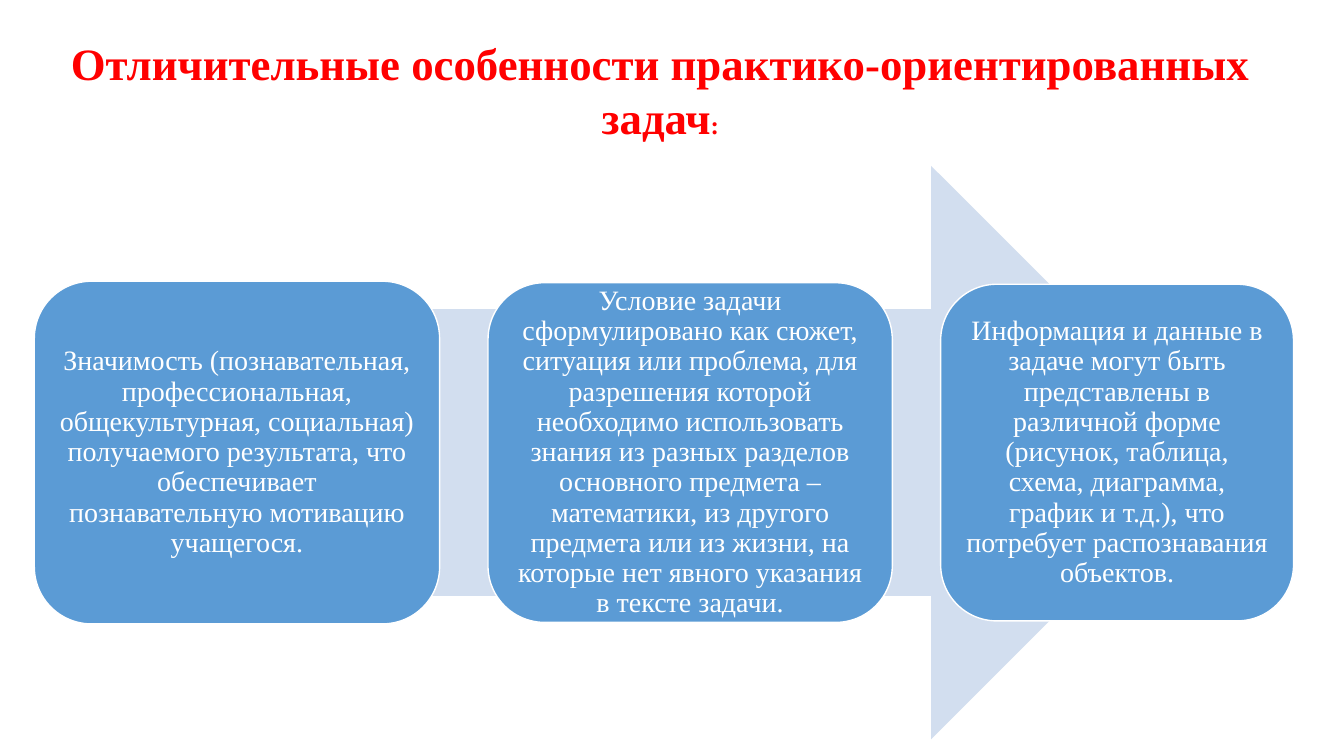
from pptx import Presentation
from pptx.dml.color import RGBColor
from pptx.enum.shapes import MSO_SHAPE as Shape
from pptx.enum.text import MSO_ANCHOR as Anchor, PP_ALIGN as Align
from pptx.util import Inches, Pt

# Content
TITLE = [("Отличительные особенности практико-ориентированных задач", 32), (":", 18)]
FEATURES = [  # text, card width, card height
    ("Значимость (познавательная, профессиональная, общекультурная, социальная) "
     "получаемого результата, что обеспечивает познавательную мотивацию учащегося.",
     4.02, 3.4),
    ("Условие задачи сформулировано как сюжет, ситуация или проблема, для разрешения "
     "которой необходимо использовать знания из разных разделов основного предмета – "
     "математики, из другого предмета или из жизни, на которые нет явного указания "
     "в тексте задачи.",
     4.01, 3.37),
    ("Информация и данные в задаче могут быть представлены в различной форме "
     "(рисунок, таблица, схема, диаграмма, график и т.д.), что потребует "
     "распознавания объектов.",
     3.5, 3.34),
]

# Layout and style
WIDTH, HEIGHT = 13.33, 7.5
MIDDLE = 4.49
CARD_LEFT, CARD_GAP, CARD_INSET = 0.34, 0.48, 0.08
ARROW_LEFT, ARROW_WIDTH, ARROW_HEIGHT = 1.45, 10.63, 5.69
FONT = "Times New Roman"
RED, BLUE, PALE, WHITE = "FF0000", "5B9BD5", "D2DEEF", "FFFFFF"


def paint(color_format, value):
    color_format.rgb = RGBColor.from_string(value)


def add_shape(page, kind, left, width, height, fill, line=None):
    """Add a shape centred vertically on the common axis."""
    shape = page.shapes.add_shape(kind, Inches(left), Inches(MIDDLE - height / 2),
                                  Inches(width), Inches(height))
    shape.shadow.inherit = False
    shape.fill.solid()
    paint(shape.fill.fore_color, fill)
    if line:
        paint(shape.line.color, line)
        shape.line.width = Pt(1)
    else:
        shape.line.fill.background()
    return shape


def write(box, runs, color, bold=False, anchor=Anchor.TOP, inset=None,
          spacing=None, after=None):
    frame = box.text_frame
    frame.word_wrap = True
    frame.vertical_anchor = anchor
    if inset is not None:
        frame.margin_left = frame.margin_right = Inches(inset)
        frame.margin_top = frame.margin_bottom = Inches(inset)
    para = frame.paragraphs[0]
    para.alignment = Align.CENTER
    para.line_spacing = spacing
    para.space_after = after
    for text, size in runs:
        span = para.add_run()
        span.text = text
        span.font.name = FONT
        span.font.size = Pt(size)
        span.font.bold = bold
        paint(span.font.color, color)


def main():
    deck = Presentation()
    deck.slide_width, deck.slide_height = Inches(WIDTH), Inches(HEIGHT)
    page = deck.slides.add_slide(deck.slide_layouts[6])

    # Arrow behind the cards
    add_shape(page, Shape.RIGHT_ARROW, ARROW_LEFT, ARROW_WIDTH, ARROW_HEIGHT, PALE)

    # Row of cards with equal gaps
    left = CARD_LEFT
    for text, width, height in FEATURES:
        card = add_shape(page, Shape.ROUNDED_RECTANGLE, left, width, height, BLUE, WHITE)
        write(card, [(text, 20)], WHITE, anchor=Anchor.MIDDLE,
              inset=CARD_INSET, spacing=0.9)
        left += width + CARD_GAP

    # Title
    title = page.shapes.add_textbox(Inches(0.46), Inches(0.31), Inches(12.18), Inches(1.18))
    write(title, TITLE, RED, bold=True, after=Pt(6))

    deck.save("out.pptx")


if __name__ == "__main__":
    main()
